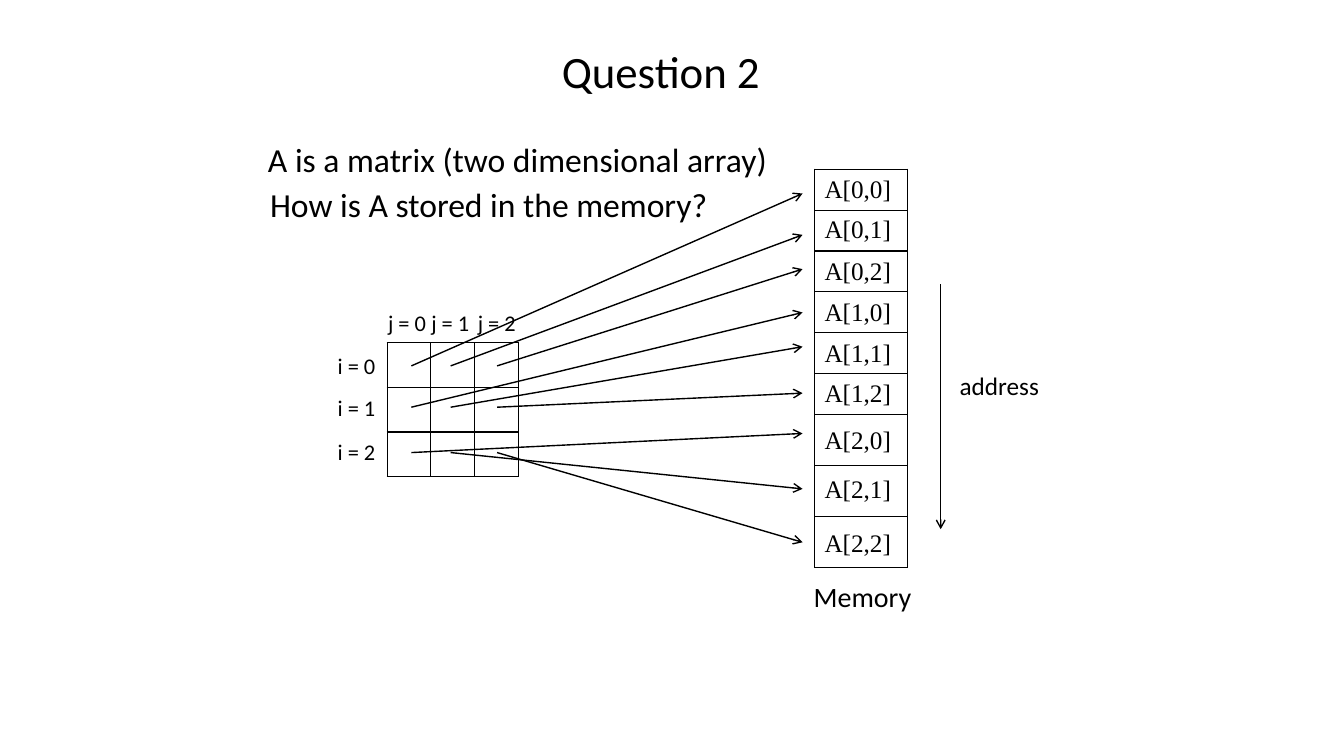
"""Build a slide showing how a 3 by 3 matrix is laid out in memory."""
from dataclasses import dataclass
from itertools import product

from lxml.etree import SubElement
from pptx import Presentation
from pptx.dml.color import RGBColor
from pptx.enum.shapes import MSO_CONNECTOR as Conn
from pptx.enum.text import MSO_ANCHOR as Anchor, MSO_AUTO_SIZE as Auto, PP_ALIGN as Align
from pptx.oxml.ns import qn
from pptx.slide import Slide
from pptx.util import Inches, Pt

BLACK = "000000"
SANS, SERIF = "Calibri", "Times New Roman"


@dataclass
class Label:
    text: str
    x: float
    y: float
    w: float
    h: float
    size: int
    font: str = SANS
    align: Align = Align.LEFT
    anchor: Anchor = Anchor.TOP
    wrap: bool = False


@dataclass
class Arrow:
    x1: float
    y1: float
    x2: float
    y2: float


@dataclass
class Grid:
    x: float
    y: float
    cols: list[float]
    rows: list[float]


def rgb(color: str) -> RGBColor:
    return RGBColor.from_string(color)


def set_all(target: object, formats: dict) -> None:
    for name, value in formats.items():
        setattr(target, name, value)


def add_label(s: Slide, b: Label) -> None:
    sp = s.shapes.add_textbox(*map(Inches, (b.x, b.y, b.w, b.h)))
    tf = sp.text_frame
    set_all(tf, {"word_wrap": b.wrap, "vertical_anchor": b.anchor,
                 "auto_size": Auto.NONE if b.wrap else Auto.SHAPE_TO_FIT_TEXT})
    p = tf.paragraphs[0]
    p.alignment = b.align
    r = p.add_run()
    r.text = b.text
    set_all(r.font, {"name": b.font, "size": Pt(b.size)})
    r.font.color.rgb = rgb(BLACK)


def add_arrow(s: Slide, a: Arrow) -> None:
    cx = s.shapes.add_connector(Conn.STRAIGHT, *map(Inches, (a.x1, a.y1, a.x2, a.y2)))
    cx.line.width = Pt(1)
    cx.line.color.rgb = rgb(BLACK)
    SubElement(cx.line._get_or_add_ln(), qn("a:tailEnd"), type="arrow")
    SubElement(cx._element.spPr, qn("a:effectLst"))


def add_grid(s: Slide, g: Grid) -> None:
    box = map(Inches, (g.x, g.y, sum(g.cols), sum(g.rows)))
    tbl = s.shapes.add_table(len(g.rows), len(g.cols), *box).table
    set_all(tbl, {"first_row": False, "horz_banding": False})
    for col, w in zip(tbl.columns, g.cols):
        col.width = Inches(w)
    for row, h in zip(tbl.rows, g.rows):
        row.height = Inches(h)
    for cell in tbl.iter_cells():
        set_all(cell, {"margin_top": 0, "margin_bottom": 0})
        tc_pr = cell._tc.get_or_add_tcPr()
        for side in ("lnL", "lnR", "lnT", "lnB"):
            ln = SubElement(tc_pr, qn(f"a:{side}"), w=str(Pt(1)))
            SubElement(SubElement(ln, qn("a:solidFill")), qn("a:srgbClr"), val=BLACK)
        cell.fill.background()


def main() -> None:
    prs = Presentation()
    set_all(prs, {"slide_width": Inches(13.33), "slide_height": Inches(7.5)})
    s = prs.slides.add_slide(prs.slide_layouts[6])

    unit = 3.95 / 39
    grids = [
        Grid(3.84, 3.4, [1.3 / 3] * 3, [1.33 / 3] * 3),
        Grid(8.08, 1.68, [0.92], [4 * unit] * 6 + [5 * unit] * 3),
    ]

    labels = [
        Label("How is A stored in the memory?", 2.58, 1.78, 7.5, 0.55, 24, wrap=True),
        Label("Question 2", 0.89, 0.08, 11.33, 1.25, 32,
              align=Align.CENTER, anchor=Anchor.MIDDLE, wrap=True),
        Label("A is a matrix (two dimensional array)", 2.56, 1.33, 5.27, 0.64, 24, wrap=True),
        Label("Memory", 7.72, 5.7, 1.67, 0.55, 20, align=Align.CENTER, wrap=True),
        Label("address", 9.42, 3.62, 1, 0.4, 18),
    ]
    labels += [Label(f"i = {i}", 3.25, y, 0.58, 0.37, 16)
               for i, y in enumerate((3.44, 3.86, 4.3))]
    labels += [Label(f"j = {j}", x, 3.02, 0.58, 0.37, 16)
               for j, x in enumerate((3.75, 4.18, 4.64))]
    slot_tops = (1.67, 2.07, 2.48, 2.89, 3.3, 3.69, 4.16, 4.65, 5.18)
    labels += [Label(f"A[{i},{j}]", 8.08, y, 0.87, 0.4, 18, SERIF)
               for (i, j), y in zip(product(range(3), repeat=2), slot_tops)]

    cells = product((3.63, 4.04, 4.49), (4.08, 4.47, 4.93))
    tips = (1.92, 2.33, 2.67, 3.1, 3.44, 3.9, 4.3, 4.85, 5.38)
    arrows = [Arrow(x, y, 7.96, tip) for (y, x), tip in zip(cells, tips)]
    arrows.append(Arrow(9.33, 2.82, 9.33, 5.25))

    for g in grids:
        add_grid(s, g)
    for b in labels:
        add_label(s, b)
    for a in arrows:
        add_arrow(s, a)
    prs.save("out.pptx")


if __name__ == "__main__":
    main()
